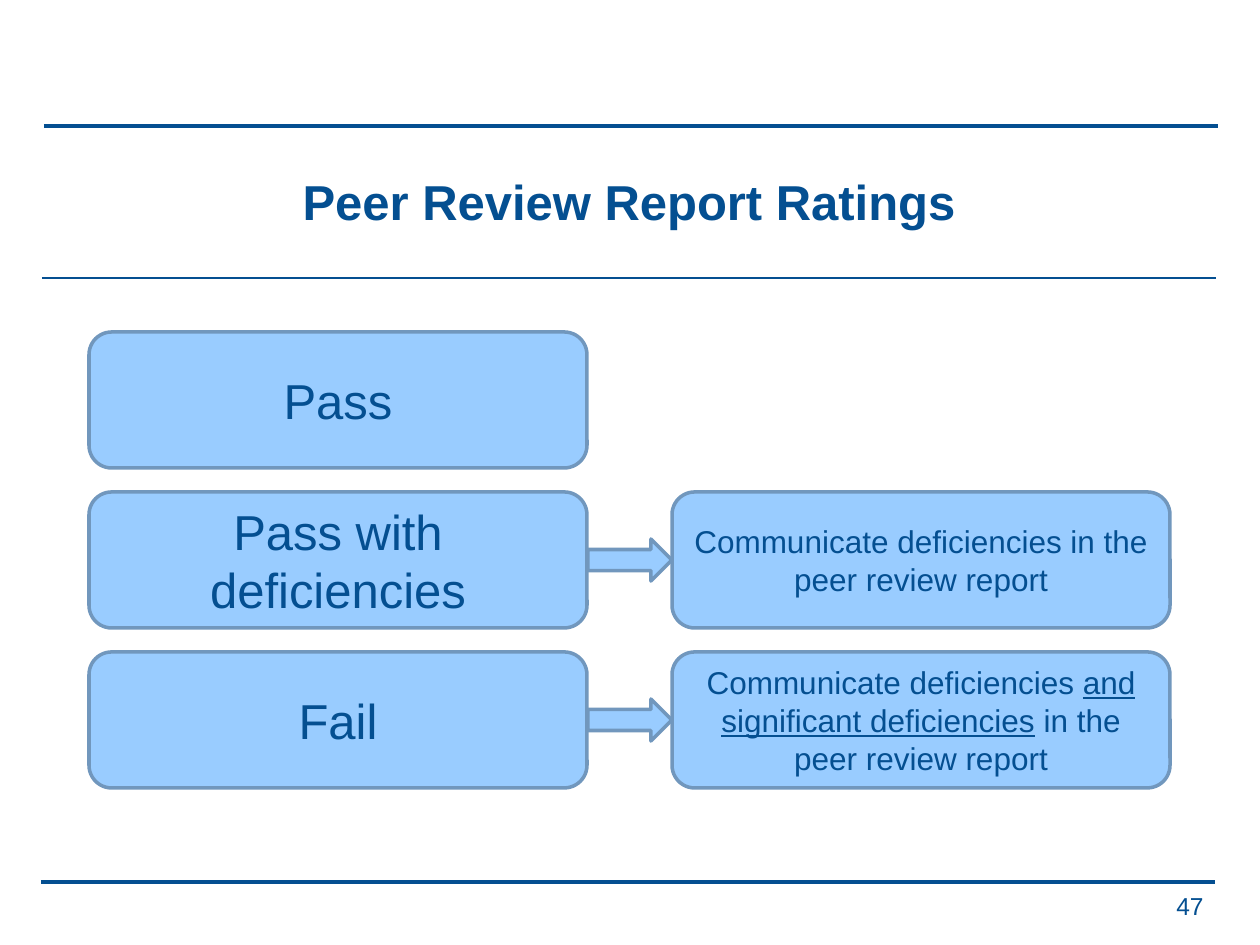
"""Build the slide on peer review report ratings."""
from lxml import etree
from pptx import Presentation
from pptx import util as u
from pptx.dml.color import RGBColor
from pptx.enum import shapes, text
from pptx.oxml import ns

SCALE = 914400 / 126
NAVY = RGBColor(0x04, 0x4F, 0x91)
SKY = RGBColor(0x99, 0xCC, 0xFF)
STEEL = RGBColor(0x71, 0x97, 0xBD)


def px(*sizes):
    return [u.Emu(round(size * SCALE)) for size in sizes]


class Sketch:
    def __init__(self, slide, font="Arial", ink=NAVY, fill=SKY, edge=STEEL):
        self.slide = slide
        self.font = font
        self.ink = ink
        self.fill = fill
        self.edge = edge

    def rule(self, left, top, width, weight):
        line = self.slide.shapes.add_connector(
            shapes.MSO_CONNECTOR.STRAIGHT, *px(left, top, left + width, top))
        line.line.color.rgb = self.ink
        line.line.width = u.Pt(weight)
        etree.SubElement(line._element.spPr, ns.qn("a:effectLst"))

    def letter(self, shape, parts, size, align, bold=False):
        frame = shape.text_frame
        frame.word_wrap = True
        frame.vertical_anchor = text.MSO_ANCHOR.MIDDLE
        para = frame.paragraphs[0]
        para.alignment = align
        for words, under in parts:
            run = para.add_run()
            run.text = words
            run.font.name = self.font
            run.font.size = u.Pt(size)
            run.font.bold = bold
            run.font.underline = under
            run.font.color.rgb = self.ink

    def label(self, words, box, size, align, bold=False):
        shape = self.slide.shapes.add_textbox(*px(*box))
        self.letter(shape, [(words, False)], size, align, bold)

    def block(self, kind, box):
        shape = self.slide.shapes.add_shape(kind, *px(*box))
        shape.shadow.inherit = False
        shape.fill.solid()
        shape.fill.fore_color.rgb = self.fill
        shape.line.color.rgb = self.edge
        shape.line.width = u.Pt(2)
        return shape

    def card(self, parts, left, top, size):
        shape = self.block(shapes.MSO_SHAPE.ROUNDED_RECTANGLE, (left, top, 498, 136))
        self.letter(shape, parts, size, text.PP_ALIGN.CENTER)

    def arrow(self, left, top):
        self.block(shapes.MSO_SHAPE.RIGHT_ARROW, (left, top, 84, 42))


def main():
    deck = Presentation()
    deck.slide_width, deck.slide_height = px(1260, 945)
    sketch = Sketch(deck.slides.add_slide(deck.slide_layouts[6]))

    for left, top, weight in [(44, 126, 2.5), (41, 882, 2.5), (42, 278, 1.5)]:
        sketch.rule(left, top, 1174, weight)
    sketch.label("Peer Review Report Ratings", (42, 138, 1174, 126), 28,
                 text.PP_ALIGN.CENTER, bold=True)
    sketch.label("47", (922, 883, 294, 45), 14, text.PP_ALIGN.RIGHT)

    ratings = [
        ("Pass", []),
        ("Pass with deficiencies",
         [("Communicate deficiencies in the peer review report", False)]),
        ("Fail",
         [("Communicate deficiencies ", False),
          ("and significant deficiencies", True),
          (" in the peer review report", False)]),
    ]
    for row, (rating, action) in enumerate(ratings):
        top = 332 + 160 * row
        sketch.card([(rating, False)], 89, top, 28)
        if action:
            sketch.arrow(588, top + 47)
            sketch.card(action, 672, top, 18)

    deck.save("out.pptx")


if __name__ == "__main__":
    main()
